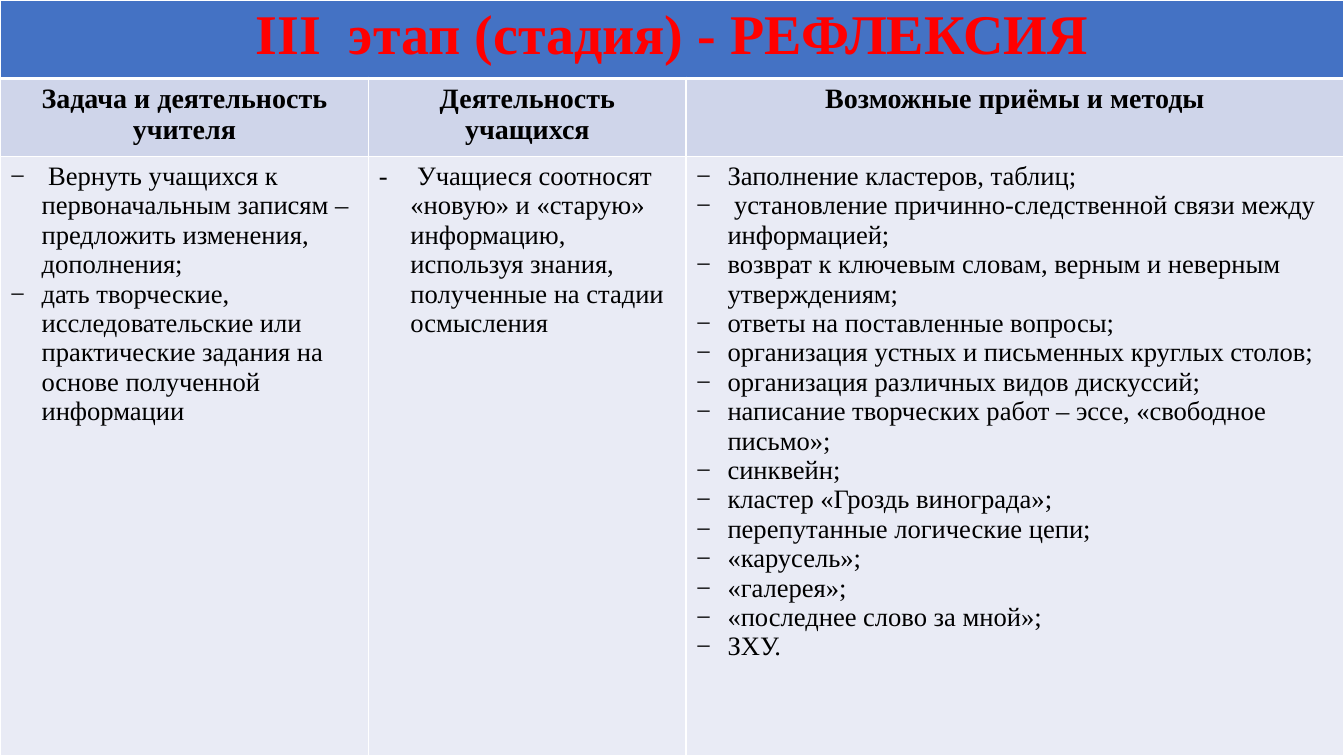
from dataclasses import dataclass

from lxml import etree
from pptx import Presentation
from pptx.dml.color import RGBColor
from pptx.enum.text import PP_ALIGN
from pptx.oxml.ns import qn
from pptx.util import Pt

CENTER = PP_ALIGN.CENTER
LEFT = PP_ALIGN.LEFT
BLANK_LAYOUT = 6
SLIDE_WIDTH, SLIDE_HEIGHT = Pt(960), Pt(540)
ROW_HEIGHTS = (56, 56, 428)
BULLET_INDENT = Pt(22.5)


@dataclass(frozen=True)
class RowStyle:
    fill: str
    color: str
    size: float
    bold: bool
    align: PP_ALIGN
    top_border: float = 1
    bottom_border: float = 1


@dataclass(frozen=True)
class Theme:
    font: str
    border: str
    stage: RowStyle
    heading: RowStyle
    content: RowStyle


@dataclass(frozen=True)
class Column:
    width: float
    heading: str
    bullet: str
    items: tuple[str, ...]


THEME = Theme(
    font="Times New Roman",
    border="FFFFFF",
    stage=RowStyle("4472C4", "FF0000", 40, True, CENTER, bottom_border=3),
    heading=RowStyle("CFD5EA", "000000", 20, True, CENTER, top_border=3),
    content=RowStyle("E9EBF5", "000000", 19, False, LEFT),
)

STAGE_TITLE = "III  этап (стадия) - РЕФЛЕКСИЯ"

COLUMNS = (
    Column(263.5, "Задача и деятельность учителя", "−", (
        " Вернуть учащихся к первоначальным записям – предложить изменения, дополнения;",
        "дать творческие, исследовательские или практические задания на основе "
        "полученной информации",
    )),
    Column(226.5, "Деятельность учащихся", "-", (
        " Учащиеся соотносят «новую» и «старую» информацию, используя знания, "
        "полученные на стадии осмысления",
    )),
    Column(470, "Возможные приёмы и методы", "−", (
        "Заполнение кластеров, таблиц;",
        " установление причинно-следственной связи между информацией;",
        "возврат к ключевым словам, верным и неверным утверждениям;",
        "ответы на поставленные вопросы;",
        "организация устных и письменных круглых столов;",
        "организация различных видов дискуссий;",
        "написание творческих работ – эссе, «свободное письмо»;",
        "синквейн;",
        "кластер «Гроздь винограда»;",
        "перепутанные логические цепи;",
        "«карусель»;",
        "«галерея»;",
        "«последнее слово за мной»;",
        "ЗХУ.",
    )),
)


def set_borders(cell, style: RowStyle) -> None:
    widths = {"a:lnL": 1, "a:lnR": 1, "a:lnT": style.top_border, "a:lnB": style.bottom_border}
    properties = cell._tc.get_or_add_tcPr()
    for position, (tag, width) in enumerate(widths.items()):
        line = etree.Element(qn(tag), w=str(Pt(width)))
        solid = etree.SubElement(line, qn("a:solidFill"))
        etree.SubElement(solid, qn("a:srgbClr"), val=THEME.border)
        properties.insert(position, line)


def set_bullet(paragraph, bullet: str) -> None:
    properties = paragraph._p.get_or_add_pPr()
    properties.set("marL", str(BULLET_INDENT))
    properties.set("indent", str(-BULLET_INDENT))
    etree.SubElement(properties, qn("a:buFont"), typeface=THEME.font)
    etree.SubElement(properties, qn("a:buChar"), char=bullet)


def style_cell(cell, style: RowStyle) -> None:
    cell.fill.solid()
    cell.fill.fore_color.rgb = RGBColor.from_string(style.fill)
    set_borders(cell, style)


def write_cell(cell, lines: tuple[str, ...], style: RowStyle, bullet: str = "") -> None:
    cell.text_frame.text = "\n".join(lines)
    for paragraph in cell.text_frame.paragraphs:
        paragraph.alignment = style.align
        if bullet:
            set_bullet(paragraph, bullet)
        for run in paragraph.runs:
            run.font.name = THEME.font
            run.font.size = Pt(style.size)
            run.font.bold = style.bold
            run.font.color.rgb = RGBColor.from_string(style.color)


def add_stage_table(slide) -> None:
    table = slide.shapes.add_table(
        len(ROW_HEIGHTS), len(COLUMNS), 0, 0, SLIDE_WIDTH, SLIDE_HEIGHT
    ).table
    row_styles = (THEME.stage, THEME.heading, THEME.content)
    for row, height, style in zip(table.rows, ROW_HEIGHTS, row_styles):
        row.height = Pt(height)
        for cell in row.cells:
            style_cell(cell, style)

    stage_cell = table.cell(0, 0)
    stage_cell.merge(table.cell(0, len(COLUMNS) - 1))
    write_cell(stage_cell, (STAGE_TITLE,), THEME.stage)

    for index, column in enumerate(COLUMNS):
        table.columns[index].width = Pt(column.width)
        write_cell(table.cell(1, index), (column.heading,), THEME.heading)
        write_cell(table.cell(2, index), column.items, THEME.content, column.bullet)


def main() -> None:
    presentation = Presentation()
    presentation.slide_width = SLIDE_WIDTH
    presentation.slide_height = SLIDE_HEIGHT
    slide = presentation.slides.add_slide(presentation.slide_layouts[BLANK_LAYOUT])
    add_stage_table(slide)
    presentation.save("out.pptx")


if __name__ == "__main__":
    main()
